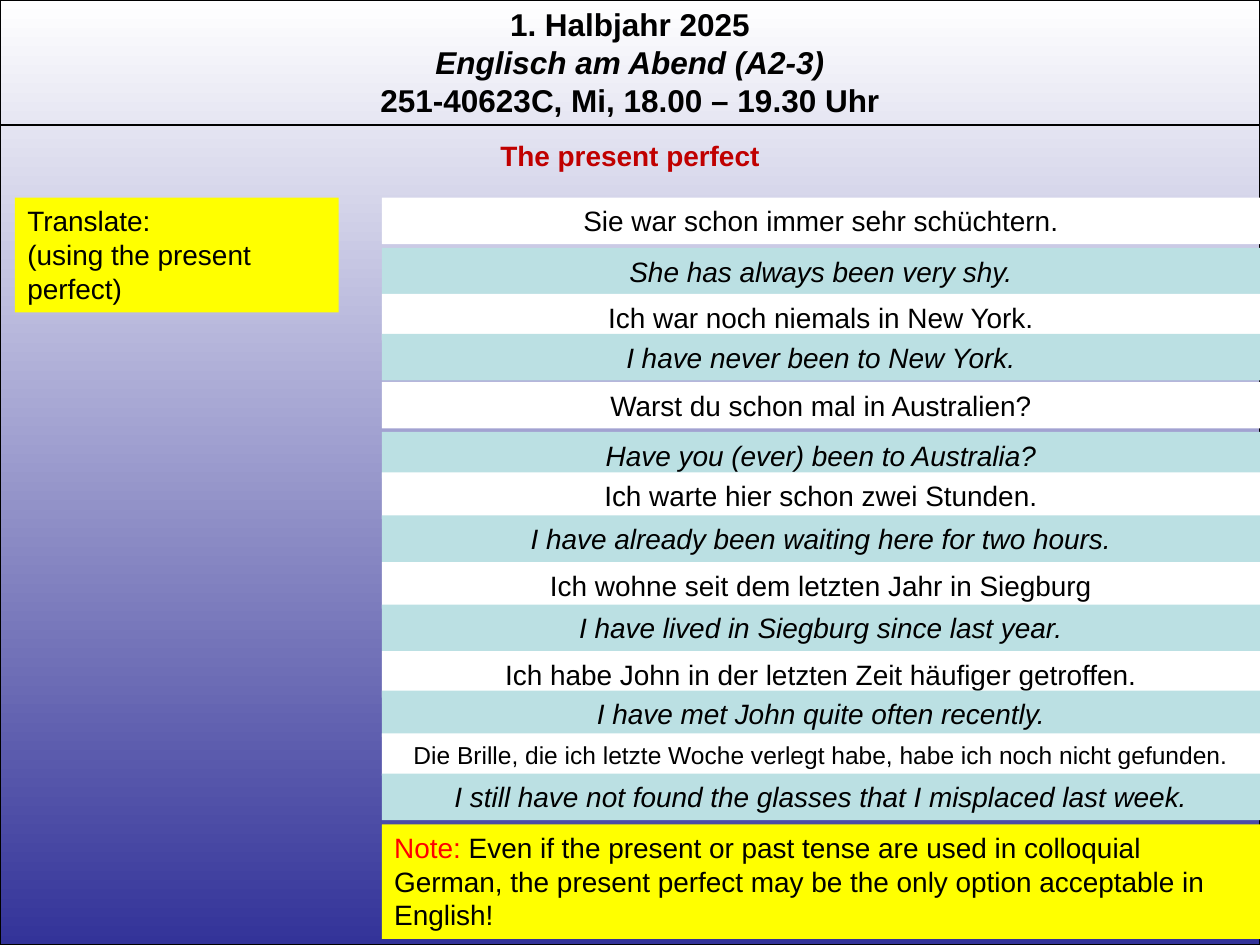
from lxml import etree
from pptx import Presentation
from pptx import util as u
from pptx.dml.color import RGBColor
from pptx.enum import shapes, text
from pptx.oxml.ns import qn

BLACK, WHITE, YELLOW, TEAL = "000000", "FFFFFF", "FFFF00", "BBE0E3"
INDIGO, DARK_RED, RED = "333399", "C00000", "FF0000"
PAGE_W, PAGE_H = 720, 540


def rgb(hex_colour):
    return RGBColor.from_string(hex_colour)


class Worksheet:
    """Holds the text style and the slide being built."""
    font, size = "Arial", 16

    def __init__(self, slide):
        self.slide = slide

    def fill_text(self, frame, paragraphs, align=text.PP_ALIGN.CENTER, size=None):
        """Each paragraph is a list of runs: (words, colour, bold, italic)."""
        frame.word_wrap = True
        frame.auto_size = text.MSO_AUTO_SIZE.SHAPE_TO_FIT_TEXT
        frame.vertical_anchor = text.MSO_ANCHOR.TOP
        for i, runs in enumerate(paragraphs):
            para = frame.add_paragraph() if i else frame.paragraphs[0]
            para.alignment = align
            for words, colour, bold, italic in runs:
                run = para.add_run()
                run.text = words
                run.font.name, run.font.size = self.font, u.Pt(size or self.size)
                run.font.bold, run.font.italic = bold, italic
                run.font.color.rgb = rgb(colour)

    def box(self, left, top, width, height, paragraphs, fill=None, **style):
        box = self.slide.shapes.add_textbox(*map(u.Pt, (left, top, width, height)))
        if fill:
            box.fill.solid()
            box.fill.fore_color.rgb = rgb(fill)
        self.fill_text(box.text_frame, paragraphs, **style)

    def title(self, left, top, width, height, paragraphs):
        title = self.slide.shapes.title
        title.left, title.top, title.width, title.height = map(
            u.Pt, (left, top, width, height))
        self.fill_text(title.text_frame, paragraphs)
        # Bring the title in front of the backdrop
        self.slide.shapes._spTree.append(title._element)

    def backdrop(self, upper, lower):
        panel = self.slide.shapes.add_shape(
            shapes.MSO_SHAPE.RECTANGLE, 0, 0, u.Pt(PAGE_W), u.Pt(PAGE_H))
        panel.shadow.inherit = False
        panel.fill.gradient()
        panel.fill.gradient_angle = 270
        for stop, colour in zip(panel.fill.gradient_stops, (upper, lower)):
            stop.color.rgb = rgb(colour)
        panel.line.color.rgb = rgb(BLACK)
        panel.line.width = u.Pt(0.75)

    def rule(self, top):
        rule = self.slide.shapes.add_connector(
            shapes.MSO_CONNECTOR.STRAIGHT, 0, u.Pt(top), u.Pt(PAGE_W), u.Pt(top))
        rule.line.color.rgb = rgb(BLACK)
        rule.line.width = u.Pt(0.75)
        etree.SubElement(rule._element.spPr, qn("a:effectLst"))


# Top, German sentence, top, English answer
TRANSLATIONS = [
    (113, "Sie war schon immer sehr schüchtern.",
     141.7, "She has always been very shy."),
    (168, "Ich war noch niemals in New York.",
     190.8, "I have never been to New York."),
    (218.3, "Warst du schon mal in Australien?",
     246.8, "Have you (ever) been to Australia?"),
    (270, "Ich warte hier schon zwei Stunden.",
     294.5, "I have already been waiting here for two hours."),
    (321.2, "Ich wohne seit dem letzten Jahr in Siegburg",
     345.5, "I have lived in Siegburg since last year."),
    (372.1, "Ich habe John in der letzten Zeit häufiger getroffen.",
     394.7, "I have met John quite often recently."),
    (419.1, "Die Brille, die ich letzte Woche verlegt habe, habe ich noch nicht gefunden.",
     442.1, "I still have not found the glasses that I misplaced last week."),
]
COLUMN_X, ROW_H, BLOCK_H = 218.2, 26.6, 65.5
COLUMN_W = PAGE_W - COLUMN_X


def main():
    prs = Presentation()
    prs.slide_width, prs.slide_height = u.Pt(PAGE_W), u.Pt(PAGE_H)
    sheet = Worksheet(prs.slides.add_slide(prs.slide_layouts[5]))

    # Course header
    sheet.backdrop(WHITE, INDIGO)
    sheet.box(0, -0.7, PAGE_W, 72, [
        [("1. Halbjahr 2025", BLACK, True, False)],
        [("Englisch am Abend (A2-3)", BLACK, True, True)],
        [("251-40623C, Mi, 18.00 – 19.30 Uhr", BLACK, True, False)],
    ], size=18)
    sheet.rule(71.4)
    sheet.title(0, 75.6, PAGE_W, ROW_H,
                [[("The present perfect", DARK_RED, True, False)]])

    # Task
    sheet.box(8.6, 113, 185, BLOCK_H, [
        [("Translate:", BLACK, False, False)],
        [("(using the present perfect)", BLACK, False, False)],
    ], fill=YELLOW, align=text.PP_ALIGN.LEFT)

    # Sentences and answers; a long sentence gets smaller type
    for german_top, german, english_top, english in TRANSLATIONS:
        is_long = len(german) > 60
        sheet.box(COLUMN_X, german_top, COLUMN_W, 24.2 if is_long else ROW_H,
                  [[(german, BLACK, False, False)]], fill=WHITE,
                  size=14 if is_long else None)
        sheet.box(COLUMN_X, english_top, COLUMN_W, ROW_H,
                  [[(english, BLACK, False, True)]], fill=TEAL)

    # Note
    sheet.box(COLUMN_X, 471, COLUMN_W, BLOCK_H, [[
        ("Note: ", RED, False, False),
        ("Even if the present or past tense are used in colloquial German, "
         "the present perfect may be the only option acceptable in English!",
         BLACK, False, False),
    ]], fill=YELLOW, align=text.PP_ALIGN.LEFT)

    prs.save("out.pptx")


if __name__ == "__main__":
    main()
